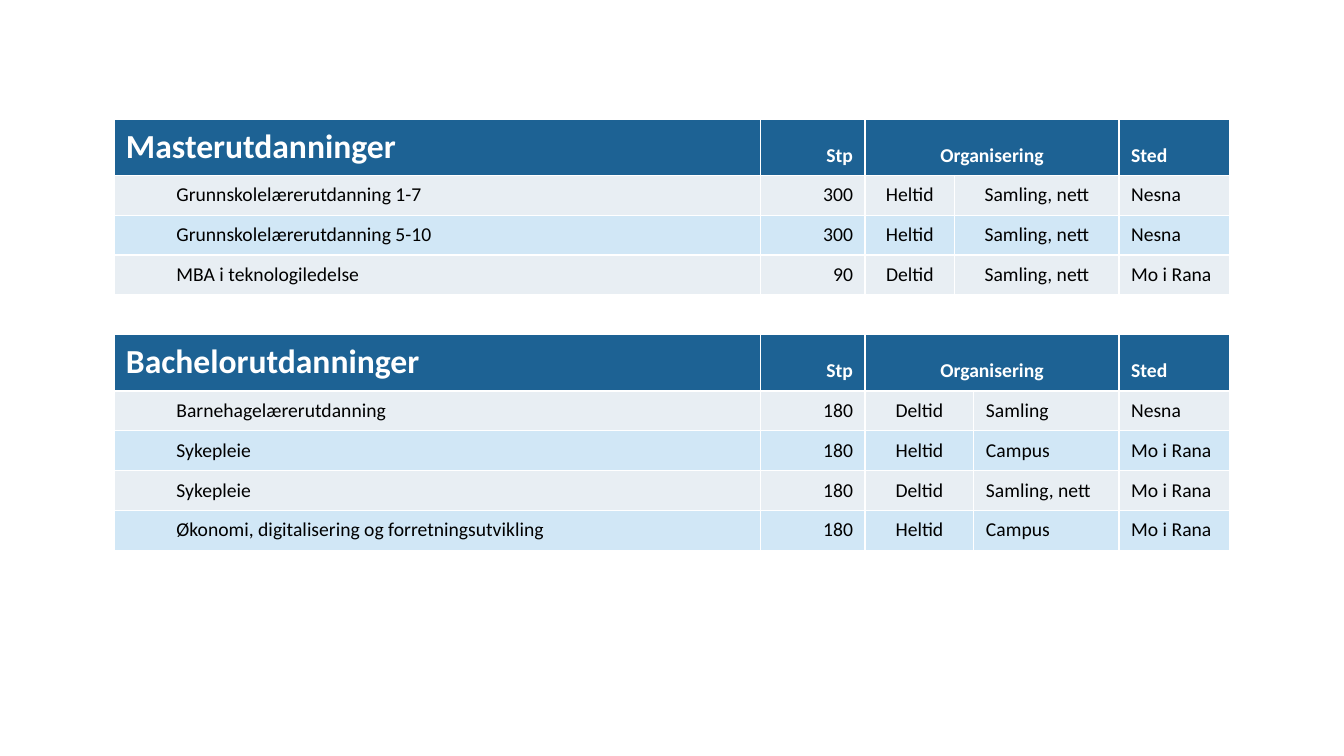
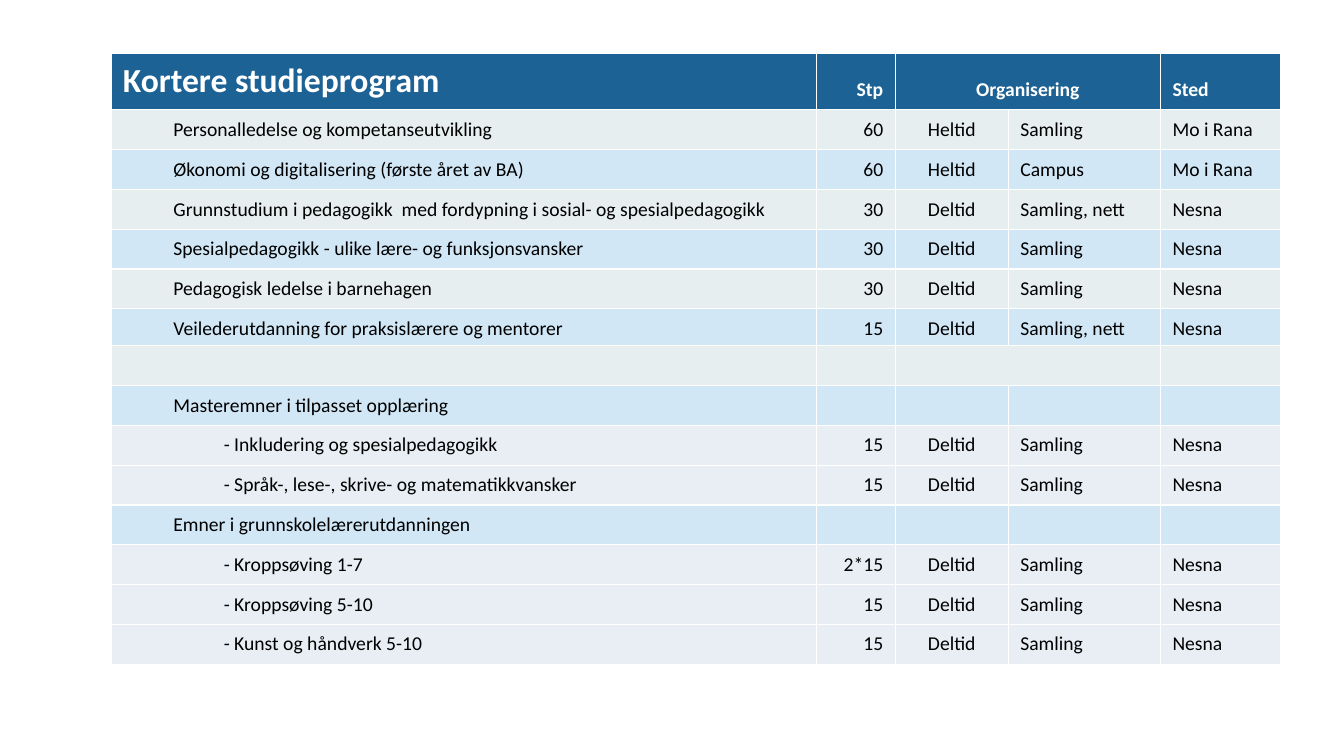
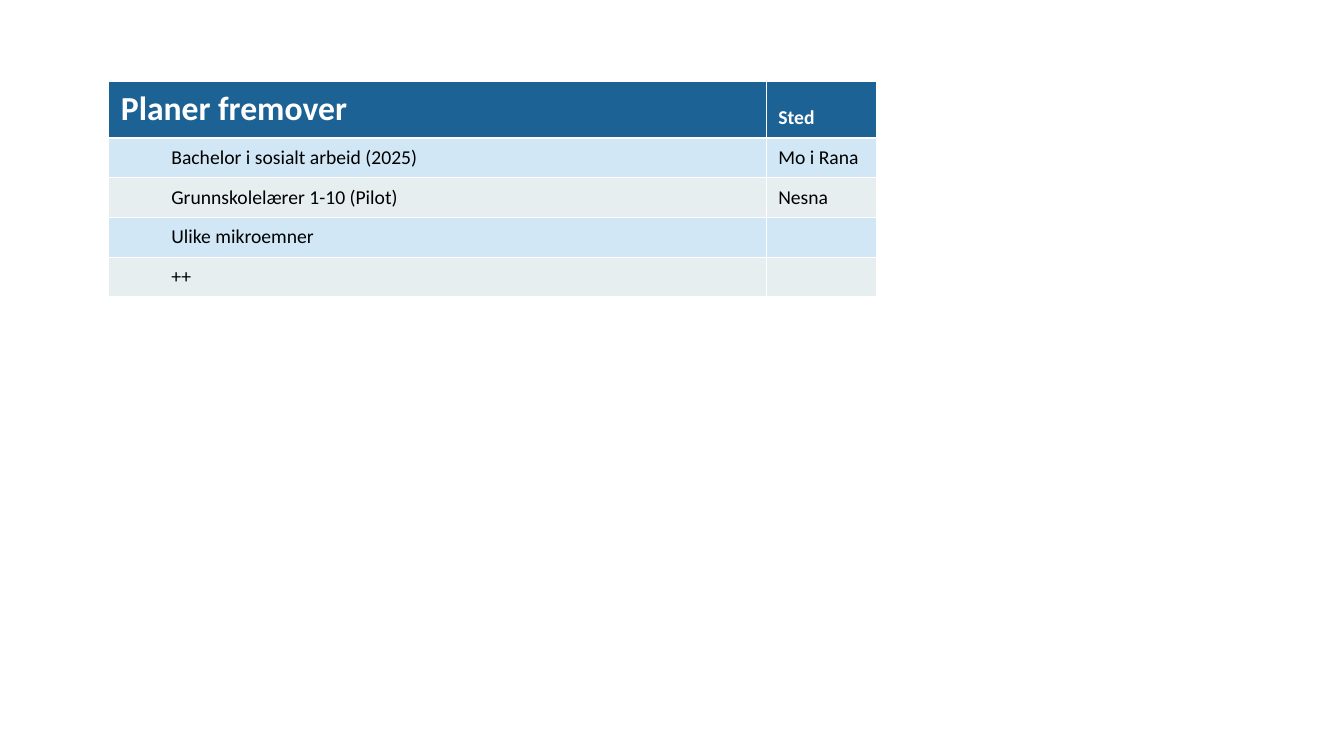
from dataclasses import dataclass

from lxml.etree import SubElement
from pptx import Presentation
from pptx.dml.color import RGBColor
from pptx.enum.text import MSO_ANCHOR as Anchor, PP_ALIGN as Align
from pptx.oxml.ns import qn
from pptx.util import Inches, Pt


@dataclass(frozen=True)
class Theme:
    font: str = "Calibri"
    title_size: int = 24
    text_size: int = 14
    border_width: int = 1
    header: str = "1D6294"
    blue: str = "D1E7F6"
    pale: str = "E8EEF3"
    grey: str = "E6EEF0"
    white: str = "FFFFFF"
    black: str = "000000"


theme = Theme()
HEADER_HEIGHT = 0.56
LEFT, RIGHT, CENTER = Align.LEFT, Align.RIGHT, Align.CENTER


def write_cell(cell, text, fill, color, size, bold=False, align=LEFT, level=0, right_inset=0.12):
    # Insets and anchor
    cell.margin_left, cell.margin_right = Inches(0.12), Inches(right_inset)
    cell.margin_top, cell.margin_bottom = Inches(0.07), Inches(0.08)
    cell.vertical_anchor = Anchor.BOTTOM

    # Borders go before the fill
    properties = cell._tc.get_or_add_tcPr()
    for side in ("a:lnL", "a:lnR", "a:lnT", "a:lnB"):
        line = SubElement(properties, qn(side), w=str(Pt(theme.border_width)))
        line_fill = SubElement(line, qn("a:solidFill"))
        SubElement(line_fill, qn("a:srgbClr"), val=theme.white)
    cell.fill.solid()
    cell.fill.fore_color.rgb = RGBColor.from_string(fill)

    # Text
    para = cell.text_frame.paragraphs[0]
    para.alignment = align
    if level:
        para.level = level
        para._p.get_or_add_pPr().set("marL", str(Inches(0.5 * level)))
    if text:
        span = para.add_run()
        span.text = text
        span.font.name = theme.font
        span.font.size = Pt(size)
        span.font.bold = bold
        span.font.color.rgb = RGBColor.from_string(color)
    else:
        # An empty cell keeps the row low
        SubElement(para._p, qn("a:endParaRPr"), sz=str(size * 100))


# Rows are (fill, texts); None continues the cell to its left
HEAD, BLUE, PALE, GREY, BLANK = theme.header, theme.blue, theme.pale, theme.grey, theme.white

degree_table = dict(
    at=(1.13, 1.18), height=4.28,
    widths=(6.41, 1.04, 0.89, 0.19, 1.44, 1.1),
    aligns=(LEFT, RIGHT, CENTER, CENTER, LEFT, LEFT),
    rows=[
        (HEAD, ("Masterutdanninger", "Stp", "Organisering", None, None, "Sted")),
        (PALE, ("Grunnskolelærerutdanning 1-7", "300", "Heltid", "Samling, nett", None, "Nesna")),
        (BLUE, ("Grunnskolelærerutdanning 5-10", "300", "Heltid", "Samling, nett", None, "Nesna")),
        (PALE, ("MBA i teknologiledelse", "90", "Deltid", "Samling, nett", None, "Mo i Rana")),
        (BLANK, ("", "", "", "", None, "")),
        (HEAD, ("Bachelorutdanninger", "Stp", "Organisering", None, None, "Sted")),
        (PALE, ("Barnehagelærerutdanning", "180", "Deltid", None, "Samling", "Nesna")),
        (BLUE, ("Sykepleie", "180", "Heltid", None, "Campus", "Mo i Rana")),
        (PALE, ("Sykepleie", "180", "Deltid", None, "Samling, nett", "Mo i Rana")),
        (BLUE, ("Økonomi, digitalisering og forretningsutvikling", "180", "Heltid", None,
                "Campus", "Mo i Rana")),
    ],
)

short_layout = dict(
    widths=(7, 0.78, 1.12, 1.51, 1.19),
    aligns=(LEFT, RIGHT, CENTER, LEFT, LEFT),
)
short_table = dict(
    short_layout, at=(1.1, 0.53), height=2.93,
    rows=[
        (HEAD, ("Kortere studieprogram", "Stp", "Organisering", None, "Sted")),
        (GREY, ("Personalledelse og kompetanseutvikling", "60", "Heltid", "Samling", "Mo i Rana")),
        (BLUE, ("Økonomi og digitalisering (første året av BA)", "60", "Heltid", "Campus",
                "Mo i Rana")),
        (GREY, ("Grunnstudium i pedagogikk  med fordypning i sosial- og spesialpedagogikk", "30",
                "Deltid", "Samling, nett", "Nesna")),
        (BLUE, ("Spesialpedagogikk - ulike lære- og funksjonsvansker", "30", "Deltid", "Samling",
                "Nesna")),
        (GREY, ("Pedagogisk ledelse i barnehagen", "30", "Deltid", "Samling", "Nesna")),
        (BLUE, ("Veilederutdanning for praksislærere og mentorer", "15", "Deltid",
                "Samling, nett", "Nesna")),
    ],
)
course_table = dict(
    short_layout, at=(1.1, 3.43), height=3.16,
    rows=[
        (GREY, ("", "", "", None, "")),
        (BLUE, ("Masteremner i tilpasset opplæring", "", "", "", "")),
        (PALE, ("- Inkludering og spesialpedagogikk", "15", "Deltid", "Samling", "Nesna")),
        (PALE, ("- Språk-, lese-, skrive- og matematikkvansker", "15", "Deltid", "Samling",
                "Nesna")),
        (BLUE, ("Emner i grunnskolelærerutdanningen", "", "", "", "")),
        (PALE, ("- Kroppsøving 1-7", "2*15", "Deltid", "Samling", "Nesna")),
        (PALE, ("- Kroppsøving 5-10", "15", "Deltid", "Samling", "Nesna")),
        (PALE, ("- Kunst og håndverk 5-10", "15", "Deltid", "Samling", "Nesna")),
    ],
)

plan_table = dict(
    at=(1.08, 0.81), height=2.53, right_inset=0,
    widths=(6.52, 1.09),
    aligns=(LEFT, LEFT),
    rows=[
        (HEAD, ("Planer fremover", "Sted")),
        (BLUE, ("Bachelor i sosialt arbeid (2025)", "Mo i Rana")),
        (GREY, ("Grunnskolelærer 1-10 (Pilot)", "Nesna")),
        (BLUE, ("Ulike mikroemner", "")),
        (GREY, ("++", "")),
        (BLANK, ("", "")),
    ],
)


def add_program_table(page, at, height, widths, aligns, rows, right_inset=0.12):
    left, top = at
    table = page.shapes.add_table(
        len(rows), len(widths), Inches(left), Inches(top), Inches(sum(widths)), Inches(height)
    ).table
    table.first_row = table.horz_banding = False
    for column, width in zip(table.columns, widths):
        column.width = Inches(width)

    # Body rows share the height that the headers leave
    headers = sum(fill == HEAD for fill, _ in rows)
    body_height = (height - headers * HEADER_HEIGHT) / (len(rows) - headers)

    for row, (fill, texts) in enumerate(rows):
        is_header = fill == HEAD
        table.rows[row].height = Inches(HEADER_HEIGHT if is_header else body_height)
        for column, text in enumerate(texts):
            is_name = column == 0
            level = 0
            if is_name and text and not is_header:
                level = 2 if text.startswith("- ") else 1
            write_cell(
                table.cell(row, column), text, fill,
                color=theme.white if is_header else theme.black,
                size=theme.title_size if is_header and is_name else theme.text_size,
                bold=is_header, align=aligns[column], level=level, right_inset=right_inset,
            )
        # Join each cell with the continuations after it
        for column, text in enumerate(texts):
            end = column
            while end + 1 < len(texts) and texts[end + 1] is None:
                end += 1
            if text is not None and end > column:
                table.cell(row, column).merge(table.cell(row, end))


# Deck
deck = Presentation()
deck.slide_width, deck.slide_height = Inches(13.33), Inches(7.5)
for tables in ([degree_table], [short_table, course_table], [plan_table]):
    page = deck.slides.add_slide(deck.slide_layouts[6])
    for program in tables:
        add_program_table(page, **program)

deck.save("out.pptx")
